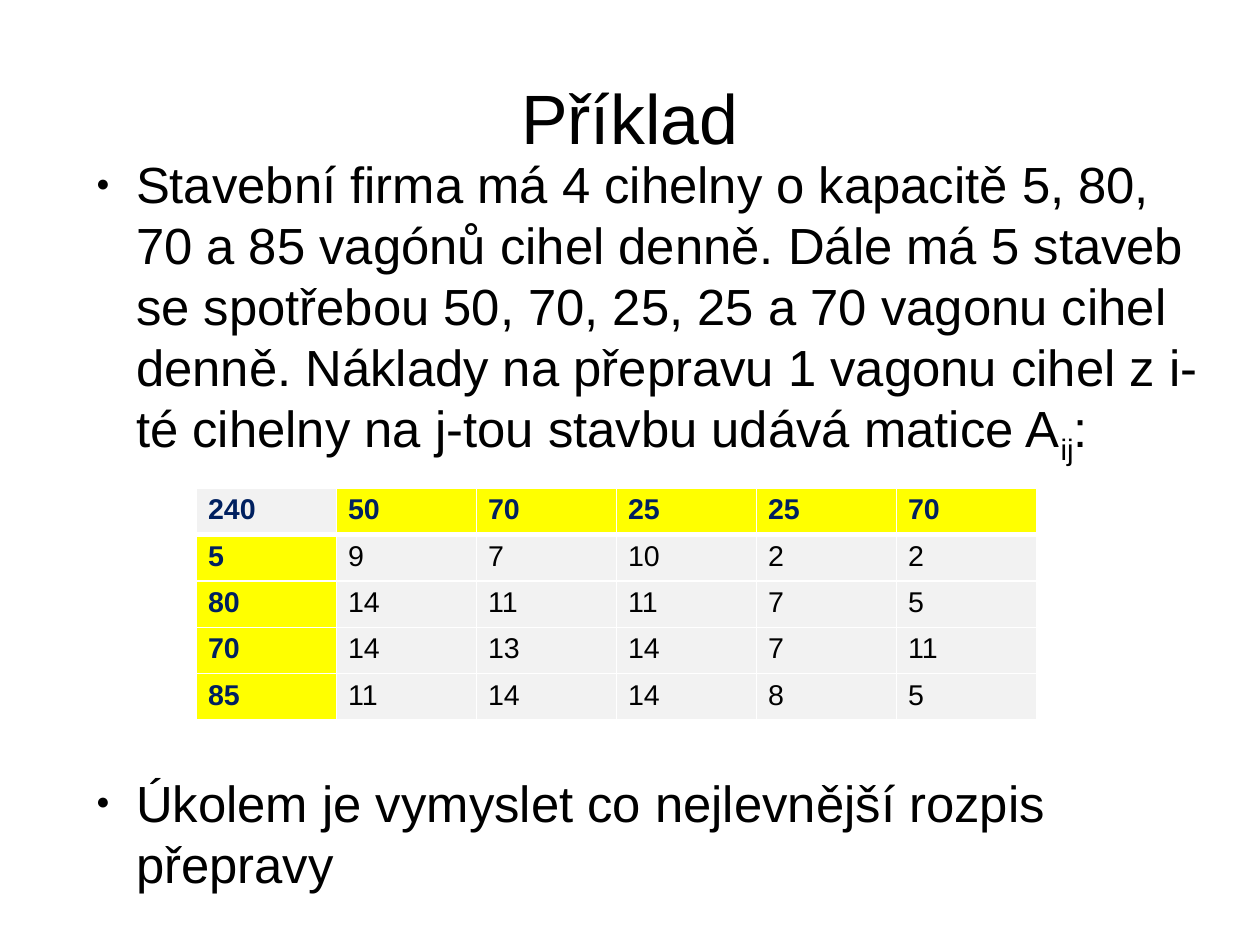
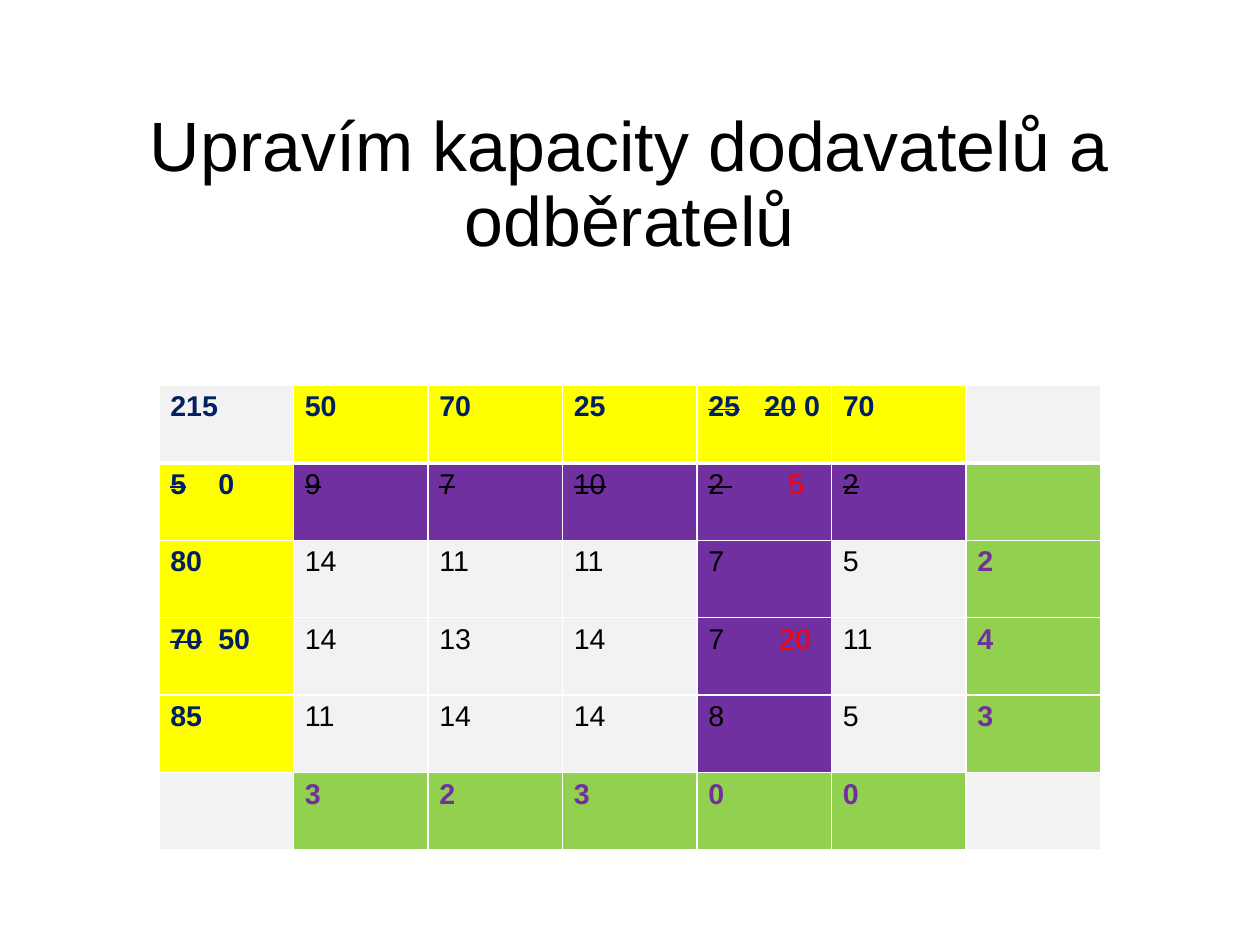
from lxml import etree
from pptx import Presentation
from pptx.dml.color import RGBColor
from pptx.enum.text import MSO_ANCHOR, MSO_AUTO_SIZE, PP_ALIGN
from pptx.oxml.ns import qn
from pptx.util import Cm, Inches, Pt

CENTER, LEFT = PP_ALIGN.CENTER, PP_ALIGN.LEFT
MIDDLE, TOP = MSO_ANCHOR.MIDDLE, MSO_ANCHOR.TOP
NO_FIT = MSO_AUTO_SIZE.NONE

BLACK = RGBColor(0, 0, 0)
WHITE = RGBColor(0xFF, 0xFF, 0xFF)
NAVY = RGBColor(0x00, 0x20, 0x60)
GRAY = RGBColor(0xF2, 0xF2, 0xF2)
YELLOW = RGBColor(0xFF, 0xFF, 0x00)
PURPLE = RGBColor(0x70, 0x30, 0xA0)
GREEN = RGBColor(0x92, 0xD0, 0x50)
RED = RGBColor(0xFF, 0x00, 0x00)

FONT = "Arial"
SLIDE_W, SLIDE_H = Cm(28), Cm(21)
TITLE_X, TEXT_W, TITLE_H = 0.55, 9.92, 1.38
TITLE_ONLY, TITLE_AND_CONTENT = 5, 1

# Cell kind: fill, text colour, bold
KINDS = {
    "T": (GRAY, NAVY, True),       # total
    "Y": (YELLOW, NAVY, True),     # capacity or demand
    "C": (GRAY, BLACK, False),     # open cost
    "X": (PURPLE, BLACK, False),   # closed cost
    "D": (GREEN, PURPLE, True),    # difference
}

TASK = [
    [("Stavební firma má 4 cihelny o kapacitě 5, 80, 70 a 85 vagónů cihel denně. "
      "Dále má 5 staveb se spotřebou 50, 70, 25, 25 a 70 vagonu cihel denně. "
      "Náklady na přepravu 1 vagonu cihel z i-té cihelny na j-tou stavbu "
      "udává matice A", False), ("ij", True), (":", False)],
    [("Úkolem je vymyslet co nejlevnější rozpis přepravy", False)],
]
TABLE_GAP = 192  # points left between the two bullets for the table

COSTS = [
    ["240", "50", "70", "25", "25", "70"],
    ["5", "9", "7", "10", "2", "2"],
    ["80", "14", "11", "11", "7", "5"],
    ["70", "14", "13", "14", "7", "11"],
    ["85", "11", "14", "14", "8", "5"],
]
COST_KINDS = ["TYYYYY"] + ["YCCCCC"] * 4

# ~struck out~, ^red^; a tab moves to the cell's next tab stop
ADJUSTED = [
    ["215", "50", "70", "25", "~25~\t~20~ 0", "70", ""],
    ["~5~\t0", "~9~", "~7~", "~10~", "~2 ~\t^5^", "~2~", ""],
    ["80", "14", "11", "11", "7", "5", "2"],
    ["~70~\t50", "14", "13", "14", "7\t^20^", "11", "4"],
    ["85", "11", "14", "14", "8", "5", "3"],
    ["", "3", "2", "3", "0", "0", ""],
]
ADJUSTED_KINDS = ["TYYYYYT", "YXXXXXD", "YCCCXCD", "YCCCXCD", "YCCCXCD", "TDDDDDT"]
TAB_STOPS = {(0, 4): 0.49, (1, 0): 0.42, (1, 4): 0.7, (3, 0): 0.42, (3, 4): 0.62}


def add_run(p, text, size, color=BLACK, bold=False):
    r = p.add_run()
    r.text = text
    r.font.name, r.font.size, r.font.bold = FONT, Pt(size), bold
    r.font.color.rgb = color
    return r


def place(sp, x, y, w, h, anchor):
    """Move a placeholder and return its text frame without margins."""
    sp.left, sp.top, sp.width, sp.height = map(Inches, (x, y, w, h))
    tf = sp.text_frame
    tf.word_wrap, tf.auto_size, tf.vertical_anchor = True, NO_FIT, anchor
    tf.margin_left = tf.margin_top = tf.margin_right = tf.margin_bottom = 0
    return tf


def add_slide(prs, layout, title, title_y, line_spacing):
    s = prs.slides.add_slide(prs.slide_layouts[layout])
    tf = place(s.shapes.title, TITLE_X, title_y, TEXT_W, TITLE_H, MIDDLE)
    p = tf.paragraphs[0]
    p.alignment, p.line_spacing = CENTER, line_spacing
    add_run(p, title, 44)
    return s


def set_bullet(p):
    pPr = p._p.get_or_add_pPr()
    pPr.set("marL", str(Inches(0.47)))
    pPr.set("indent", str(Inches(-0.35)))
    color = etree.SubElement(pPr, qn("a:buClr"))
    etree.SubElement(color, qn("a:srgbClr"), val=str(BLACK))
    etree.SubElement(pPr, qn("a:buSzPct"), val="45000")
    etree.SubElement(pPr, qn("a:buFont"), typeface=FONT)
    etree.SubElement(pPr, qn("a:buChar"), char="●")


def fill_body(sp):
    tf = place(sp, 0.72, 1.34, TEXT_W, 4.79, TOP)
    for i, runs in enumerate(TASK):
        p = tf.add_paragraph() if i else tf.paragraphs[0]
        p.alignment = LEFT
        p.space_before = Pt(TABLE_GAP * i)
        set_bullet(p)
        for text, subscript in runs:
            r = add_run(p, text, 32)
            if subscript:
                r._r.get_or_add_rPr().set("baseline", "-25000")


def set_borders(cell, top, bottom):
    tcPr = cell._tc.get_or_add_tcPr()
    widths = {"a:lnL": 1, "a:lnR": 1, "a:lnT": top, "a:lnB": bottom}
    for i, (tag, width) in enumerate(widths.items()):
        ln = etree.Element(qn(tag), w=str(Pt(width)))
        fill = etree.SubElement(ln, qn("a:solidFill"))
        etree.SubElement(fill, qn("a:srgbClr"), val=str(WHITE))
        tcPr.insert(i, ln)


def write_cell(p, text, color, bold):
    for i, plain in enumerate(text.split("~")):
        for j, part in enumerate(plain.split("^")):
            if part:
                r = add_run(p, part, 18, RED if j % 2 else color, bold)
                if i % 2:
                    r._r.get_or_add_rPr().set("strike", "sngStrike")


def add_grid(s, rows, kinds, x, y, w, h, tab_stops):
    n_rows, n_cols = len(rows), len(rows[0])
    table = s.shapes.add_table(n_rows, n_cols, *map(Inches, (x, y, w, h))).table
    for r, row in enumerate(rows):
        for c, text in enumerate(row):
            cell = table.cell(r, c)
            fill, color, bold = KINDS[kinds[r][c]]
            cell.fill.solid()
            cell.fill.fore_color.rgb = fill
            set_borders(cell, 3 if r == 1 else 1, 3 if r == 0 else 1)
            p = cell.text_frame.paragraphs[0]
            if (r, c) in tab_stops:
                tabs = etree.SubElement(p._p.get_or_add_pPr(), qn("a:tabLst"))
                pos = str(Inches(tab_stops[r, c]))
                etree.SubElement(tabs, qn("a:tab"), pos=pos, algn="l")
            write_cell(p, text, color, bold)


def main():
    prs = Presentation()
    prs.slide_width, prs.slide_height = SLIDE_W, SLIDE_H

    s = add_slide(prs, TITLE_AND_CONTENT, "Příklad", 0.33, 1.0)
    fill_body(s.placeholders[1])
    add_grid(s, COSTS, COST_KINDS, 1.72, 4.27, 7.35, 2.03, {})

    s = add_slide(prs, TITLE_ONLY, "Upravím kapacity dodavatelů a odběratelů", 0.94, 0.9)
    add_grid(s, ADJUSTED, ADJUSTED_KINDS, 1.39, 3.37, 8.24, 4.07, TAB_STOPS)

    prs.save("out.pptx")


if __name__ == "__main__":
    main()
